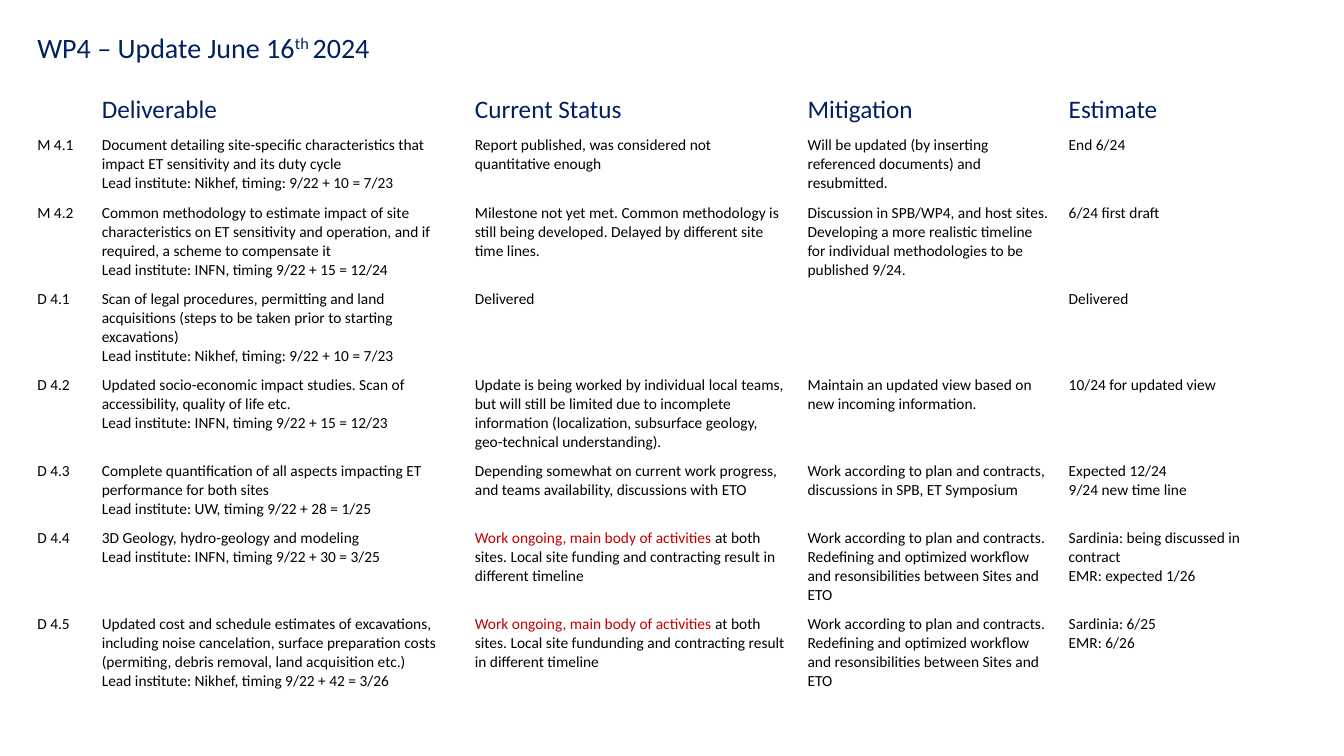
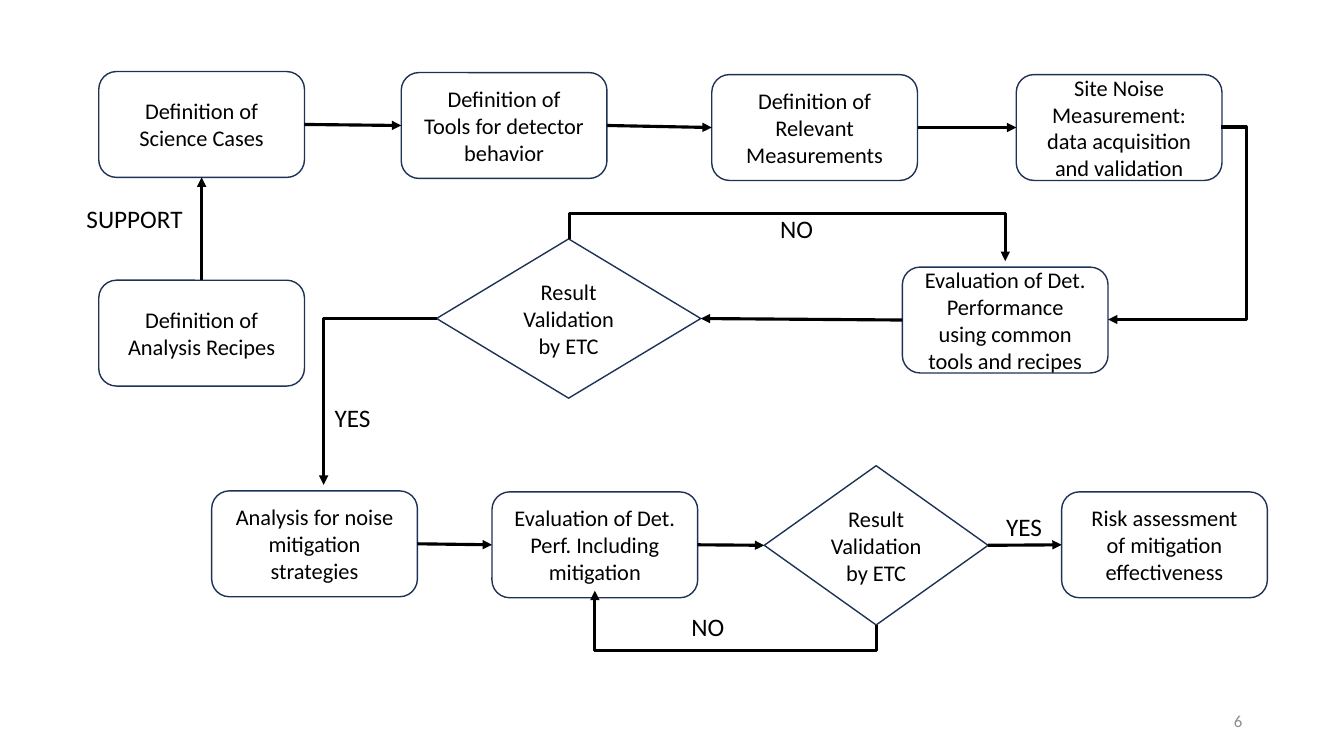
from lxml.etree import SubElement as sub
from pptx import Presentation
from pptx.dml.color import RGBColor as RGB
from pptx.enum.shapes import MSO_CONNECTOR as LINK, MSO_SHAPE as FORM
from pptx.enum.text import MSO_ANCHOR as ANCHOR, MSO_AUTO_SIZE as FIT, PP_ALIGN as ALIGN
from pptx.oxml.ns import qn
from pptx.util import Inches, Pt


class Theme:
    font = "Calibri"
    navy = RGB(0x00, 0x20, 0x60)
    edge = RGB(0x1E, 0x32, 0x56)
    black = RGB(0, 0, 0)
    red = RGB(0xC0, 0, 0)
    grey = RGB(0x8C, 0x8C, 0x8C)
    title, head, label, box, page, cell = 20, 18, 18, 16, 12, 11
    thin, thick = Pt(1), Pt(2.25)


def write(para, text, size, color=Theme.black):
    run = para.add_run()
    run.text = text
    font = run.font
    font.name, font.size, font.bold = Theme.font, Pt(size), False
    font.color.rgb = color
    return run


def arrow(link):
    """Give a connector its black line and arrowhead, without a shadow."""
    link.line.color.rgb = Theme.black
    link.line.width = Theme.thick
    sub(link.line._get_or_add_ln(), qn("a:tailEnd"), type="triangle")
    sub(link._element.spPr, qn("a:effectLst"))


deck = Presentation()
deck.slide_width, deck.slide_height = Inches(13.33), Inches(7.5)

# Status table
slide = deck.slides.add_slide(deck.slide_layouts[5])
title = slide.shapes.title
title.left, title.top = Inches(0.27), Inches(0.25)
title.width, title.height = Inches(7.19), Inches(0.44)
frame = title.text_frame
frame.auto_size, frame.vertical_anchor = FIT.NONE, ANCHOR.TOP
para = frame.paragraphs[0]
para.alignment = ALIGN.LEFT
write(para, "WP4 – Update June 16", Theme.title, Theme.navy)
power = write(para, "th ", Theme.title, Theme.navy)
power.font._element.set("baseline", "30000")
write(para, "2024", Theme.title, Theme.navy)

ongoing = "Work ongoing, main body of activities"
plan = ("Work according to plan and contracts. Redefining and optimized workflow "
        "and resonsibilities between Sites and ETO")
rows = [
    ("", "Deliverable", "Current Status", "Mitigation", "Estimate"),
    ("M 4.1",
     "Document detailing site-specific characteristics that impact ET sensitivity "
     "and its duty cycle\vLead institute: Nikhef, timing: 9/22 + 10 = 7/23",
     "Report published, was considered not quantitative enough",
     "Will be updated (by inserting referenced documents) and resubmitted.",
     "End 6/24"),
    ("M 4.2",
     "Common methodology to estimate impact of site characteristics on ET sensitivity "
     "and operation, and if required, a scheme to compensate it\v"
     "Lead institute: INFN, timing 9/22 + 15 = 12/24",
     "Milestone not yet met. Common methodology is still being developed. "
     "Delayed by different site time lines.",
     "Discussion in SPB/WP4, and host sites. Developing a more realistic timeline "
     "for individual methodologies to be published 9/24.",
     "6/24 first draft"),
    ("D 4.1",
     "Scan of legal procedures, permitting and land acquisitions (steps to be taken "
     "prior to starting excavations)\vLead institute: Nikhef, timing: 9/22 + 10 = 7/23",
     "Delivered", "", "Delivered"),
    ("D 4.2",
     "Updated socio-economic impact studies. Scan of accessibility, quality of life "
     "etc.\vLead institute: INFN, timing 9/22 + 15 = 12/23",
     "Update is being worked by individual local teams, but will still be limited due "
     "to incomplete information (localization, subsurface geology, "
     "geo-technical understanding).",
     "Maintain an updated view based on new incoming information.",
     "10/24 for updated view"),
    ("D 4.3",
     "Complete quantification of all aspects impacting ET performance for both sites\v"
     "Lead institute: UW, timing 9/22 + 28 = 1/25",
     "Depending somewhat on current work progress, and teams availability, "
     "discussions with ETO",
     "Work according to plan and contracts,\vdiscussions in SPB, ET Symposium",
     "Expected 12/24\v9/24 new time line"),
    ("D 4.4",
     "3D Geology, hydro-geology and modeling\v"
     "Lead institute: INFN, timing 9/22 + 30 = 3/25",
     ongoing + " at both sites. Local site funding and contracting result in "
     "different timeline",
     plan,
     "Sardinia: being discussed in contract\vEMR: expected 1/26"),
    ("D 4.5",
     "Updated cost and schedule estimates of excavations, including noise cancelation, "
     "surface preparation costs (permiting, debris removal, land acquisition etc.)\v"
     "Lead institute: Nikhef, timing 9/22 + 42 = 3/26",
     ongoing + " at both sites. Local site fundunding and contracting result in "
     "different timeline",
     plan,
     "Sardinia: 6/25\vEMR: 6/26"),
]
widths = [0.64, 3.7, 3.3, 2.59, 2.32]
heights = [0.41, 0.66, 0.85, 0.85, 0.85, 0.66, 0.85, 0.85]
table = slide.shapes.add_table(
    len(rows), len(widths), Inches(0.27), Inches(0.89),
    Inches(sum(widths)), Inches(sum(heights))).table
table.first_row = table.horz_banding = False
for col, width in zip(table.columns, widths):
    col.width = Inches(width)
for r, (row, height) in enumerate(zip(rows, heights)):
    table.rows[r].height = Inches(height)
    size, color = (Theme.cell, Theme.black) if r else (Theme.head, Theme.navy)
    for c, text in enumerate(row):
        cell = table.cell(r, c)
        cell.fill.background()
        para = cell.text_frame.paragraphs[0]
        if not text:
            para.font.size = Pt(size)
            continue
        if text.startswith(ongoing):
            write(para, ongoing, size, Theme.red)
            text = text.removeprefix(ongoing)
        for n, line in enumerate(text.split("\v")):
            if n:
                para.add_line_break()
            write(para, line, size, color)

# Flow chart
slide = deck.slides.add_slide(deck.slide_layouts[6])
shapes = slide.shapes
wide, high = 2.04, 1.05
steps = {
    "cases": (0.98, 0.71, "Definition of\nScience Cases"),
    "tools": (3.98, 0.72, "Definition of\nTools for detector behavior"),
    "needs": (7.06, 0.74, "Definition of\nRelevant Measurements"),
    "noise": (10.08, 0.74, "Site Noise Measurement: data acquisition and validation"),
    "recipes": (0.98, 2.78, "Definition of\nAnalysis Recipes"),
    "perform": (8.95, 2.65, "Evaluation of Det. Performance using common tools and recipes"),
    "reduce": (2.1, 4.87, "Analysis for noise mitigation strategies"),
    "retest": (4.88, 4.88, "Evaluation of Det. Perf. Including mitigation"),
    "risk": (10.53, 4.88, "Risk assessment of mitigation effectiveness"),
}
check = "Result Validation by ETC"
nodes = [(name, FORM.ROUNDED_RECTANGLE, x, y, wide, high, 0.14, text)
         for name, (x, y, text) in steps.items()]
nodes += [("first", FORM.DIAMOND, 4.33, 2.37, 2.62, 1.58, 0.1, check),
          ("second", FORM.DIAMOND, 7.58, 4.62, 2.22, 1.58, 0.1, check)]
boxes = {}
for name, form, x, y, w, h, pad, text in nodes:
    box = shapes.add_shape(form, Inches(x), Inches(y), Inches(w), Inches(h))
    box.shadow.inherit = False
    box.fill.background()
    box.line.color.rgb, box.line.width = Theme.edge, Theme.thin
    frame = box.text_frame
    frame.word_wrap, frame.vertical_anchor = True, ANCHOR.MIDDLE
    frame.margin_left = frame.margin_right = Inches(pad)
    frame.margin_top = frame.margin_bottom = 0
    for n, line in enumerate(text.split("\n")):
        para = frame.add_paragraph() if n else frame.paragraphs[0]
        para.alignment = ALIGN.CENTER
        write(para, line, Theme.box)
    boxes[name] = box

# Connection sites: 0 top, 1 left, 2 bottom, 3 right
for start, out, end, into in [
    ("cases", 3, "tools", 1), ("tools", 3, "needs", 1), ("needs", 3, "noise", 1),
    ("recipes", 0, "cases", 2), ("perform", 1, "first", 3),
    ("reduce", 3, "retest", 1), ("retest", 3, "second", 1), ("second", 3, "risk", 1),
]:
    link = shapes.add_connector(LINK.STRAIGHT, 0, 0, 0, 0)
    link.begin_connect(boxes[start], out)
    link.end_connect(boxes[end], into)
    arrow(link)

# Loops run past their ends by a fixed reach; upright ones are turned about the centre
reach = 0.25
for x1, y1, x2, y2, turn in [
    (12.11, 1.26, 10.99, 3.17, 0),
    (5.65, 2.37, 9.97, 2.59, 270),
    (8.69, 6.2, 5.9, 5.86, 90),
]:
    span = abs(x2 - x1)
    if turn:
        mid_x, mid_y = (x1 + x2) / 2, (y1 + y2) / 2
        half, span = span / 2, abs(y2 - y1)
        x1, x2 = mid_x + span / 2, mid_x - span / 2
        y1, y2 = mid_y - half, mid_y + half
    link = shapes.add_connector(LINK.ELBOW, Inches(x1), Inches(y1), Inches(x2), Inches(y2))
    props = link._element.spPr
    if turn:
        props.find(qn("a:xfrm")).set("rot", str(turn * 60000))
    guides = props.find(qn("a:prstGeom")).get_or_add_avLst()
    sub(guides, qn("a:gd"), name="adj1", fmla=f"val {round(-reach / span * 100000)}")
    arrow(link)

corner = shapes.add_connector(
    LINK.ELBOW, Inches(4.33), Inches(3.16), Inches(3.21), Inches(4.81))
corner._element.spPr.find(qn("a:prstGeom")).set("prst", "bentConnector2")
arrow(corner)

for text, x, y, w in [
    ("SUPPORT", 0.76, 1.97, 1.16), ("NO", 7.64, 2.07, 0.53), ("YES", 3.22, 3.94, 0.56),
    ("NO", 6.76, 6.02, 0.53), ("YES", 9.88, 5.02, 0.56),
]:
    label = shapes.add_textbox(Inches(x), Inches(y), Inches(w), Inches(0.4))
    write(label.text_frame.paragraphs[0], text, Theme.label)

page = shapes.add_textbox(Inches(9.42), Inches(6.95), Inches(3), Inches(0.4))
page.text_frame.word_wrap = True
page.text_frame.vertical_anchor = ANCHOR.MIDDLE
para = page.text_frame.paragraphs[0]
para.alignment = ALIGN.RIGHT
write(para, "6", Theme.page, Theme.grey)

deck.save("out.pptx")
